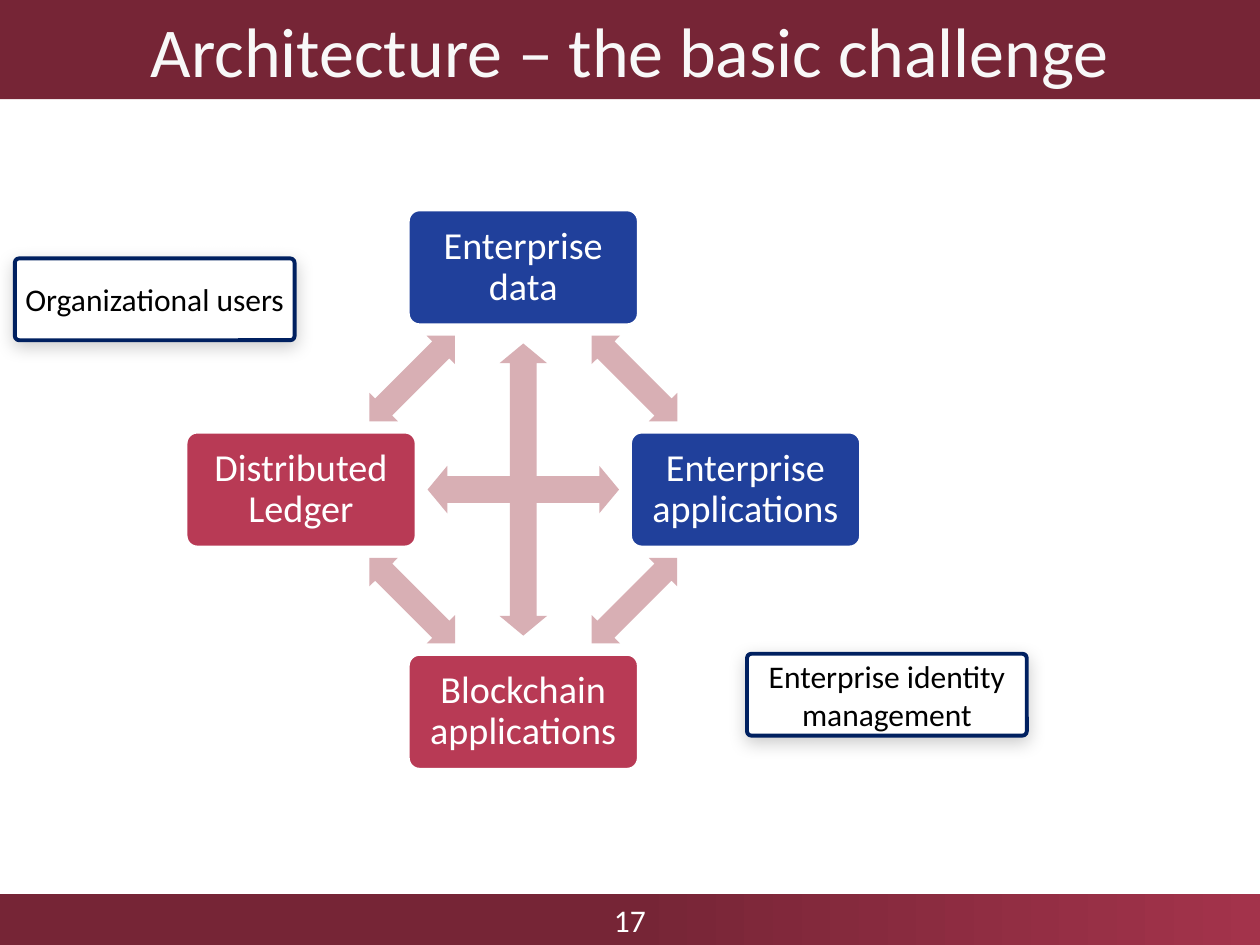
import pptx
import pptx.dml.color
import pptx.enum.shapes
import pptx.enum.text
import pptx.oxml
import pptx.oxml.ns
import pptx.util

Cm = pptx.util.Cm
Pt = pptx.util.Pt
Shape = pptx.enum.shapes.MSO_SHAPE

MAROON, CRIMSON, ROSE = "762536", "B83A55", "D8AFB4"
BLUE, NAVY, WHITE, BLACK = "20409B", "002060", "FFFFFF", "000000"
SLIDE_W, SLIDE_H = 25.4, 19.05


def colour(hex_code):
    return pptx.dml.color.RGBColor.from_string(hex_code)


class Board:
    """Style and current slide, with one method per kind of element."""

    font = "Calibri"

    def __init__(self, slide):
        self.slide = slide

    def block(self, kind, x, y, width, height, fill, adjust=()):
        """Plain filled shape without outline or shadow."""
        shape = self.slide.shapes.add_shape(kind, Cm(x), Cm(y), Cm(width), Cm(height))
        shape.shadow.inherit = False
        shape.fill.solid()
        shape.fill.fore_color.rgb = colour(fill)
        shape.line.fill.background()
        for index, value in enumerate(adjust):
            shape.adjustments[index] = value
        return shape

    def outline(self, shape, line, width):
        shape.line.color.rgb = colour(line)
        shape.line.width = Pt(width)

    def label(self, shape, text, size, text_colour, side=0.25, edge=0.13, spacing=None):
        frame = shape.text_frame
        frame.word_wrap = True
        frame.vertical_anchor = pptx.enum.text.MSO_ANCHOR.MIDDLE
        frame.margin_left = frame.margin_right = Cm(side)
        frame.margin_top = frame.margin_bottom = Cm(edge)
        paragraph = frame.paragraphs[0]
        paragraph.alignment = pptx.enum.text.PP_ALIGN.CENTER
        if spacing:
            paragraph.line_spacing = spacing
        run = paragraph.add_run()
        run.text = text
        run.font.name = self.font
        run.font.size = Pt(size)
        run.font.color.rgb = colour(text_colour)

    def bar(self, y, height, text, size, text_colour):
        """Full-width band with centred text."""
        shape = self.block(Shape.RECTANGLE, 0, y, SLIDE_W, height, MAROON)
        self.label(shape, text, size, text_colour)
        return shape

    def fade_right_half(self, shape, end):
        shape.fill.gradient()
        shape.fill.gradient_angle = 0
        for stop, place, shade in zip(shape.fill.gradient_stops, (0.5, 1), (MAROON, end)):
            stop.position = place
            stop.color.rgb = colour(shade)

    def node(self, centre_x, centre_y, text, fill):
        width, height = 4.65, 2.33
        shape = self.block(Shape.ROUNDED_RECTANGLE, centre_x - width / 2,
                           centre_y - height / 2, width, height, fill, [0.1])
        self.outline(shape, WHITE, 2)
        self.label(shape, text, 21.8, WHITE, 0.23, 0.23, 0.9)

    def link(self, centre_x, centre_y, angle):
        """Two-headed arrow turned about its centre."""
        width, height = 2.44, 0.81
        shape = self.block(Shape.LEFT_RIGHT_ARROW, centre_x - width / 2,
                           centre_y - height / 2, width, height, ROSE, [0.6, 0.5])
        shape.rotation = angle

    def callout(self, x, y, text):
        shape = self.block(Shape.ROUNDED_RECTANGLE, x, y, 5.64, 1.65, WHITE, [0.053])
        self.outline(shape, NAVY, 2.25)
        self.drop_shadow(shape)
        self.label(shape, text, 18, BLACK, 0.17, 0.1)

    def drop_shadow(self, shape):
        effects = shape._element.spPr.find(pptx.oxml.ns.qn("a:effectLst"))
        effects.append(pptx.oxml.parse_xml(
            f'<a:outerShdw {pptx.oxml.ns.nsdecls("a")} blurRad="{Pt(10)}" dist="{Pt(3)}" '
            f'dir="5400000" rotWithShape="0"><a:srgbClr val="{BLACK}">'
            '<a:alpha val="20000"/></a:srgbClr></a:outerShdw>'))


def main():
    deck = pptx.Presentation()
    deck.slide_width, deck.slide_height = Cm(SLIDE_W), Cm(SLIDE_H)
    board = Board(deck.slides.add_slide(deck.slide_layouts[6]))

    # Footer with page number, then title
    footer = board.bar(18.03, 1.02, "17", 18, WHITE)
    board.fade_right_half(footer, "A3334B")
    board.bar(0, 2, "Architecture – the basic challenge", 40, "F8F8F8")

    # Parties around the architecture
    board.callout(0.3, 5.21, "Organizational users")
    board.callout(15.06, 13.18, "Enterprise identity management")

    # Diamond of four systems, with an arrow halfway between neighbours
    hub_x, hub_y, reach = 10.55, 9.87, 4.48
    systems = [
        ("Enterprise data", BLUE, 0, -1),
        ("Enterprise applications", BLUE, 1, 0),
        ("Blockchain applications", CRIMSON, 0, 1),
        ("Distributed Ledger", CRIMSON, -1, 0),
    ]
    for index, (name, fill, dx, dy) in enumerate(systems):
        _, _, next_dx, next_dy = systems[(index + 1) % len(systems)]
        board.node(hub_x + reach * dx, hub_y + reach * dy, name, fill)
        board.link(hub_x + reach * (dx + next_dx) / 2,
                   hub_y + reach * (dy + next_dy) / 2,
                   45 if index % 2 == 0 else 315)

    # Cross of arrows in the centre
    cross_w, cross_h = 3.86, 5.89
    board.block(Shape.QUAD_ARROW, hub_x - cross_w / 2, hub_y - cross_h / 2,
                cross_w, cross_h, ROSE, [0.14, 0.124, 0.103])

    deck.save("out.pptx")


if __name__ == "__main__":
    main()
